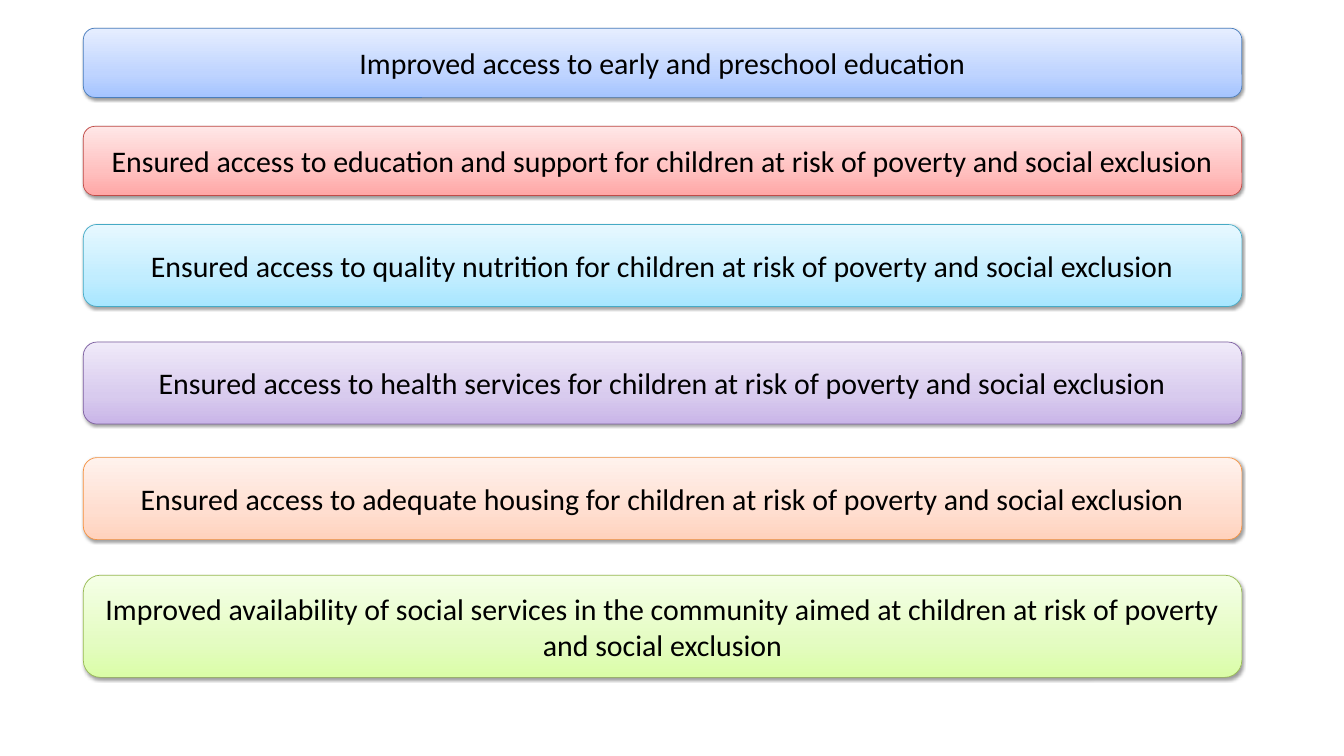
import copy

import pptx
import pptx.dml.color
import pptx.enum.shapes
import pptx.enum.text
import pptx.oxml
import pptx.oxml.ns
import pptx.util
from pptx.util import Inches

# Each scheme: line, then gradient from bottom to top
COLORS = {
    "blue": ("4B7EBC", "A4C4FF", "BFD4FF", "E6EEFF"),
    "red": ("BF4C48", "FFA6A5", "FFC0BF", "FFE7E7"),
    "aqua": ("46AAC5", "A7E6FF", "C1EDFF", "E7F8FF"),
    "purple": ("7D60A0", "C9B5E8", "D8CBEE", "F0EAF9"),
    "orange": ("F69240", "FFD2BD", "FFDED0", "FFF2ED"),
    "green": ("98B955", "DAFDA7", "E4FCC2", "F5FFE7"),
    "text": "000000",
    "shadow": "000000",
}
STOPS = (0, 0.35, 1)

# Top, height, scheme, wording
GOALS = [
    (0.42, 1.03, "blue", "Improved access to early and preschool education"),
    (1.88, 1.03, "red", "Ensured access to education and support for children "
     "at risk of poverty and social exclusion"),
    (3.34, 1.22, "aqua", "Ensured access to quality nutrition for children "
     "at risk of poverty and social exclusion"),
    (5.09, 1.22, "purple", "Ensured access to health services for children "
     "at risk of poverty and social exclusion"),
    (6.81, 1.22, "orange", "Ensured access to adequate housing for children "
     "at risk of poverty and social exclusion"),
    (8.56, 1.52, "green", "Improved availability of social services in the community "
     "aimed at children at risk of poverty and social exclusion"),
]


def rgb(value):
    return pptx.dml.color.RGBColor.from_string(value)


def fill_gradient(sp, colors):
    sp.fill.gradient()
    sp.fill.gradient_angle = 90
    # The default gradient has two stops; add the middle one
    stop_list = sp._element.spPr.find(".//" + pptx.oxml.ns.qn("a:gsLst"))
    stop_list.insert(1, copy.deepcopy(stop_list[0]))
    for stop, position, color in zip(sp.fill.gradient_stops, STOPS, colors):
        stop.position = position
        stop.color.rgb = rgb(color)


def add_shadow(sp):
    sp.shadow.inherit = False
    effects = sp._element.spPr.find(pptx.oxml.ns.qn("a:effectLst"))
    effects.append(pptx.oxml.parse_xml(
        f'<a:outerShdw {pptx.oxml.ns.nsdecls("a")} blurRad="40000" dist="20000" '
        f'dir="5400000" rotWithShape="0"><a:srgbClr val="{COLORS["shadow"]}">'
        '<a:alpha val="38000"/></a:srgbClr></a:outerShdw>'))


def add_goal(s, left, top, width, height, scheme, text):
    sp = s.shapes.add_shape(pptx.enum.shapes.MSO_SHAPE.ROUNDED_RECTANGLE,
                            left, top, width, height)
    line, *gradient = COLORS[scheme]
    fill_gradient(sp, gradient)
    sp.line.color.rgb = rgb(line)
    sp.line.width = pptx.util.Pt(0.75)
    add_shadow(sp)

    tf = sp.text_frame
    tf.text = text
    tf.word_wrap = True
    tf.vertical_anchor = pptx.enum.text.MSO_ANCHOR.MIDDLE
    p = tf.paragraphs[0]
    p.alignment = pptx.enum.text.PP_ALIGN.CENTER
    font = p.runs[0].font
    font.name = "Calibri"
    font.size = pptx.util.Pt(32)
    font.color.rgb = rgb(COLORS["text"])


def add_goal_stack(s, left, width):
    for top, height, scheme, text in GOALS:
        add_goal(s, left, Inches(top), width, Inches(height), scheme, text)


def main():
    prs = pptx.Presentation()
    prs.slide_width = Inches(20)
    prs.slide_height = Inches(11.25)
    s = prs.slides.add_slide(prs.slide_layouts[6])  # blank: the slide has no title
    add_goal_stack(s, Inches(1.24), Inches(17.24))
    prs.save("out.pptx")


if __name__ == "__main__":
    main()
